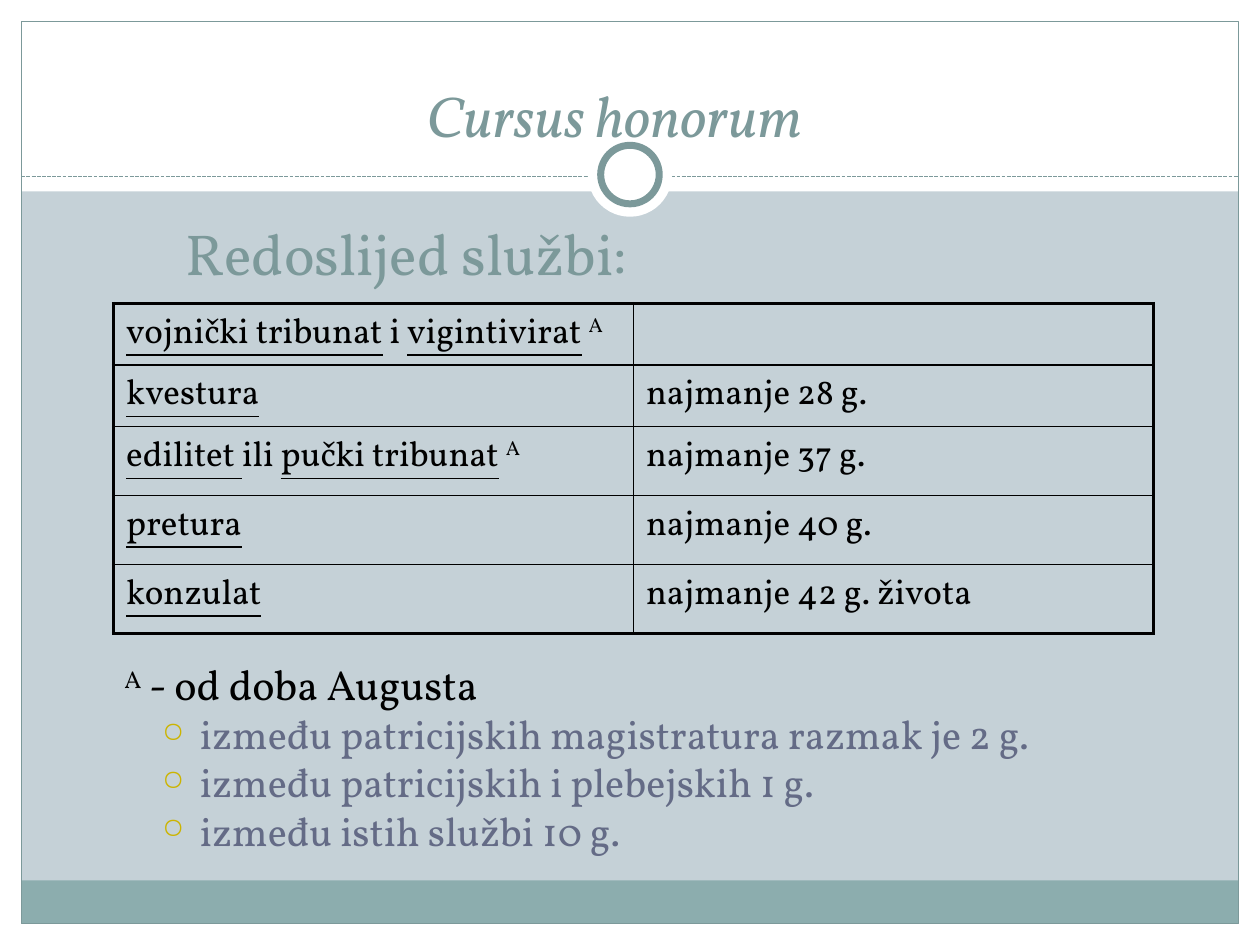
from lxml.etree import SubElement
from pptx import Presentation
from pptx.dml.color import RGBColor
from pptx.enum.dml import MSO_LINE
from pptx.enum.shapes import MSO_CONNECTOR, MSO_SHAPE
from pptx.oxml.ns import qn
from pptx.util import Cm, Pt

FONT = "Vollkorn"
TEAL, WHITE, BLACK, SLATE, GOLD = "7C999A", "FFFFFF", "000000", "646B86", "CCB400"
PLAIN, UNDER, RAISED = "plain", "under", "raised"
OFFICES = [
    ([("vojnički tribunat", UNDER), (" i ", PLAIN), ("vigintivirat", UNDER),
      (" ", PLAIN), ("A", RAISED)], ""),
    ([("kvestura", UNDER)], "najmanje 28 g."),
    ([("edilitet ", UNDER), ("ili ", PLAIN), ("pučki tribunat", UNDER),
      (" ", PLAIN), ("A", RAISED)], "najmanje 37 g."),
    ([("pretura", UNDER)], "najmanje 40 g."),
    ([("konzulat", UNDER)], "najmanje 42 g. života"),
]
ROW_HEIGHTS = [1.24, 1.24, 1.39, 1.39, 1.39]
INTERVALS = [
    "između patricijskih magistratura razmak je 2 g.",
    "između patricijskih i plebejskih 1 g.",
    "između istih službi 10 g.",
]


def color(value):
    """Turn a hex string into a colour."""
    return RGBColor.from_string(value)


def set_font(para, size, hue, italic=False):
    """Set the font shared by all runs of a paragraph."""
    font = para.font
    font.name, font.size, font.italic = FONT, Pt(size), italic
    font.color.rgb = color(hue)


def add_spans(para, spans):
    """Add runs that are plain, underlined or raised."""
    for text, style in spans:
        span = para.add_run()
        span.text = text
        if style == UNDER:
            span.font.underline = True
        elif style == RAISED:
            span.font._element.set("baseline", "30000")


def add_box(page, left, top, width, height):
    """Add a wrapping text box and return its text frame."""
    frame = page.shapes.add_textbox(Cm(left), Cm(top), Cm(width), Cm(height)).text_frame
    frame.word_wrap = True
    return frame


def add_block(page, kind, left, top, width, height, fill=None, line=None, weight=0.75):
    """Add a flat preset shape."""
    block = page.shapes.add_shape(kind, Cm(left), Cm(top), Cm(width), Cm(height))
    block.shadow.inherit = False
    if fill:
        block.fill.solid()
        block.fill.fore_color.rgb = color(fill)
    else:
        block.fill.background()
    if line:
        block.line.color.rgb = color(line)
        block.line.width = Pt(weight)
    else:
        block.line.fill.background()


def add_frame(page, width, height, margin=0.43, header=3.86, rule=3.56):
    """Draw the margins, header, footer band, outline, rule and ring."""
    rect = MSO_SHAPE.RECTANGLE
    inner, bottom = width - 2 * margin, height - margin
    for area in [(0, bottom, width, margin), (0, 0, width, header),
                 (0, 0, margin, height), (width - margin, 0, margin, height)]:
        add_block(page, rect, *area, fill=WHITE)
    add_block(page, rect, margin, bottom - 0.87, inner, 0.87, fill="8CADAE")
    add_block(page, rect, margin, margin, inner, height - 2 * margin, line=TEAL)
    divider = page.shapes.add_connector(
        MSO_CONNECTOR.STRAIGHT, Cm(margin), Cm(rule), Cm(width - margin), Cm(rule))
    divider.line.color.rgb = color(TEAL)
    divider.line.width = Pt(0.75)
    divider.line.dash_style = MSO_LINE.SQUARE_DOT
    SubElement(divider._element.spPr, qn("a:effectLst"))
    for size, line in [(1.7, None), (1.18, TEAL)]:
        add_block(page, MSO_SHAPE.OVAL, (width - size) / 2, 3.52 - size / 2,
                  size, size, fill=WHITE, line=line, weight=4)


def add_headings(page, left, top, width):
    """Place the italic title and the upright subtitle below it."""
    for text, indent, drop, italic in [("Cursus honorum", 4.85, 0, True),
                                       ("Redoslijed službi:", 0, 2.79, False)]:
        frame = add_box(page, left + indent, top + drop, width - indent, 1.87)
        para = frame.paragraphs[0]
        para.text = text
        set_font(para, 33, TEAL, italic)


def set_borders(cell, weights):
    """Draw the left, right, top and bottom borders of a cell."""
    properties = cell._tc.get_or_add_tcPr()
    for side, weight in zip("LRTB", weights):
        border = SubElement(properties, qn(f"a:ln{side}"), w=str(Pt(weight)))
        fill = SubElement(border, qn("a:solidFill"))
        SubElement(fill, qn("a:srgbClr"), val=BLACK)


def add_offices(page, left, top, width):
    """Place the table of offices with a heavy outer border."""
    table = page.shapes.add_table(len(OFFICES), 2, Cm(left), Cm(top), Cm(width),
                                  Cm(sum(ROW_HEIGHTS))).table
    table.first_row = table.horz_banding = False
    last = len(OFFICES) - 1
    for row, (office, age) in enumerate(OFFICES):
        table.rows[row].height = Cm(ROW_HEIGHTS[row])
        for column, spans in enumerate([office, [(age, PLAIN)] if age else []]):
            cell = table.cell(row, column)
            outer = [column == 0, column == 1, row == 0, row == last]
            set_borders(cell, [2.25 if edge else 1 for edge in outer])
            cell.fill.background()
            para = cell.text_frame.paragraphs[0]
            set_font(para, 20, BLACK)
            add_spans(para, spans)


def add_bullet(para, indent, hang):
    """Give a paragraph a hanging gold ring bullet."""
    properties = para._p.get_or_add_pPr()
    properties.set("marL", str(Cm(indent)))
    properties.set("indent", str(-Cm(hang)))
    tint = SubElement(properties, qn("a:buClr"))
    SubElement(tint, qn("a:srgbClr"), val=GOLD)
    SubElement(properties, qn("a:buSzPct"), val="70000")
    SubElement(properties, qn("a:buChar"), char="○")


def add_notes_below(page, left, top, width, height):
    """Place the footnote and the list of intervals."""
    frame = add_box(page, left, top, width, height)
    para = frame.paragraphs[0]
    set_font(para, 24, BLACK)
    add_spans(para, [("A", RAISED), (" - od doba Augusta", PLAIN)])
    for text in INTERVALS:
        para = frame.add_paragraph()
        add_bullet(para, 1.52, 0.76)
        para.text = text
        set_font(para, 23, SLATE)


def main():
    """Build and save the slide."""
    deck = Presentation()
    deck.slide_width, deck.slide_height = Cm(25.4), Cm(19.05)
    page = deck.slides.add_slide(deck.slide_layouts[6])
    page.background.fill.solid()
    page.background.fill.fore_color.rgb = color("C5D1D7")
    add_frame(page, 25.4, 19.05)
    add_headings(page, 3.5, 1.48, 20.9)
    add_offices(page, 2.29, 6.12, 20.96)
    add_notes_below(page, 2.26, 13.16, 20.83, 5.28)
    deck.save("out.pptx")


if __name__ == "__main__":
    main()
